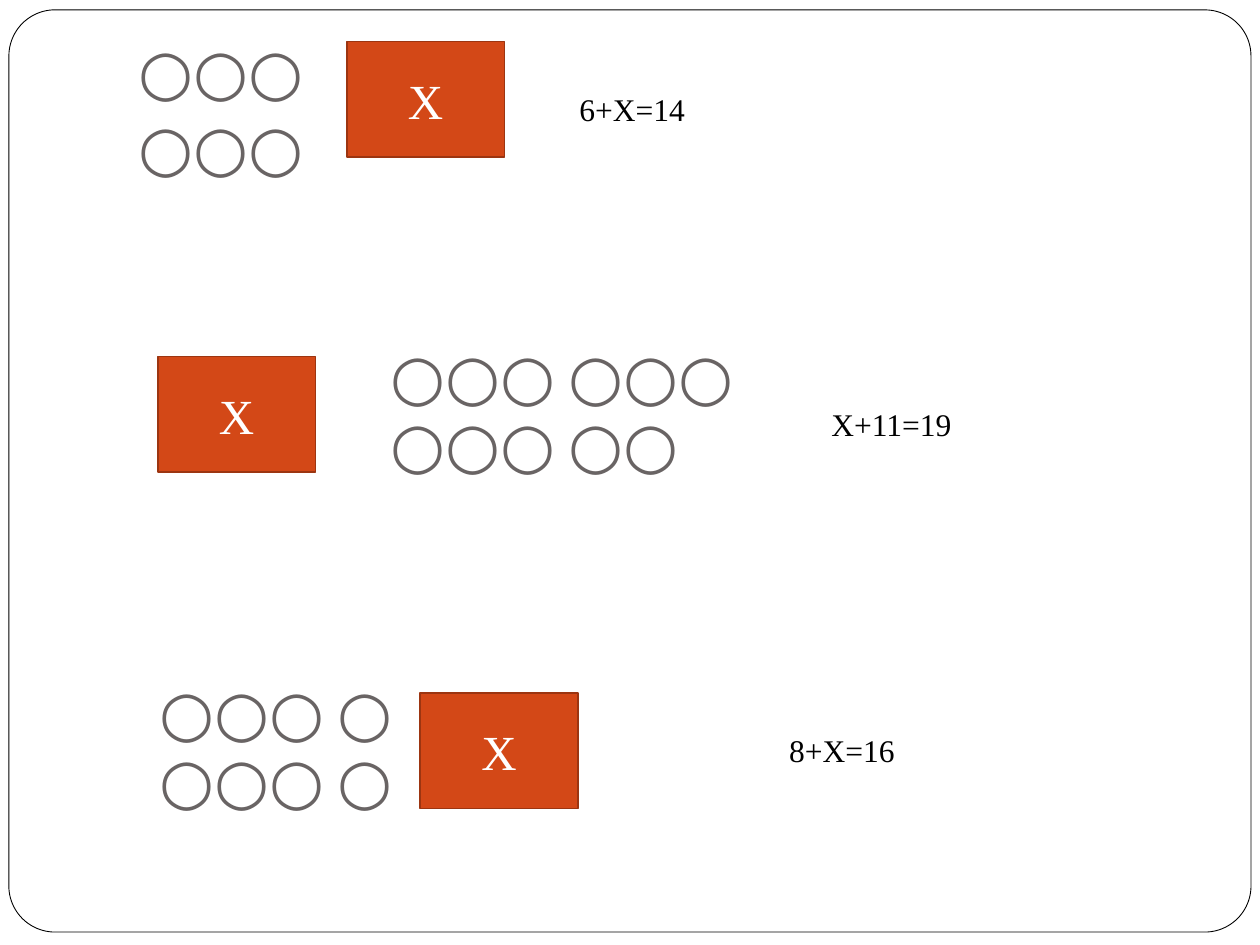
from dataclasses import dataclass
from typing import NamedTuple

from pptx import Presentation
from pptx.dml.color import RGBColor
from pptx.enum.shapes import MSO_SHAPE
from pptx.enum.text import MSO_ANCHOR, MSO_AUTO_SIZE, PP_ALIGN
from pptx.util import Cm, Pt


@dataclass(frozen=True)
class Theme:
    """Colours, fonts and type sizes of the slide."""
    paper: RGBColor = RGBColor.from_string("FFFFFF")
    ink: RGBColor = RGBColor.from_string("000000")
    counter: RGBColor = RGBColor.from_string("696464")
    card: RGBColor = RGBColor.from_string("D34817")
    card_edge: RGBColor = RGBColor.from_string("9C3511")
    text_font: str = "Times New Roman"
    counter_font: str = "Cabin"
    equation_size: int = 18
    card_size: int = 28
    counter_size: int = 36


class Box(NamedTuple):
    """Left, top, width and height in centimetres."""
    left: float
    top: float
    width: float
    height: float

    def inner(self, left, top, width, height):
        """Return a box placed relative to this one."""
        return Box(self.left + left, self.top + top, width, height)

    def lengths(self):
        """Return the four values as slide lengths."""
        return [Cm(value) for value in self]


THEME = Theme()
PAGE = Box(0, 0, 25.4, 19.05)
COUNTER_WIDTH, ROW_HEIGHT = 21.59, 3.18
CARD_WIDTH, CARD_HEIGHT = 3.18, 2.33
EQUATION_HEIGHT = 1.02

ROWS = [
    {"top": 0.76, "counters": [(2.54, "○○○\v○○○")], "spacing": 1.0,
     "card": (6.99, 0.08), "equation": (11.43, 0.93, 2.67, "6+X=14")},
    {"top": 6.77, "counters": [(7.62, "○○○\v○○○"), (11.22, "○○○\v○○")], "spacing": 0.9,
     "card": (3.18, 0.42), "equation": (16.51, 1.27, 2.95, "X+11=19")},
    {"top": 13.55, "counters": [(2.96, "○○○\v○○○"), (6.56, "○\v○")], "spacing": 0.9,
     "card": (8.47, 0.42), "equation": (15.66, 1.06, 2.67, "8+X=16")},
]


def apply(target, values):
    """Set every attribute named in the dict."""
    for name, value in values.items():
        setattr(target, name, value)


def write(shape, text, font, size, colour, frame_format, para_format):
    """Fill a shape with one formatted paragraph."""
    frame = shape.text_frame
    apply(frame, frame_format)
    para = frame.paragraphs[0]
    para.text = text
    apply(para, para_format)
    for span in para.runs:
        apply(span.font, {"name": font, "size": Pt(size)})
        span.font.color.rgb = colour


def add_panel(page, kind, box, fill, edge, weight):
    """Draw a filled preset shape with an outline."""
    panel = page.shapes.add_shape(kind, *box.lengths())
    panel.shadow.inherit = False
    panel.fill.solid()
    panel.fill.fore_color.rgb = fill
    panel.line.color.rgb = edge
    panel.line.width = Pt(weight)
    return panel


def add_frame(page, box):
    """Draw the rounded border around the page."""
    frame = add_panel(page, MSO_SHAPE.ROUNDED_RECTANGLE,
                      box.inner(0.18, 0.2, 25.04, 18.59), THEME.paper, THEME.ink, 0.5)
    frame.adjustments[0] = 0.05


def add_counters(page, box, text, spacing):
    """Place a block of counting circles."""
    write(page.shapes.add_textbox(*box.lengths()), text,
          THEME.counter_font, THEME.counter_size, THEME.counter,
          {"word_wrap": True, "vertical_anchor": MSO_ANCHOR.BOTTOM,
           "margin_bottom": Cm(0.25)},
          {"line_spacing": spacing})


def add_card(page, box):
    """Place the card that stands for the unknown."""
    card = add_panel(page, MSO_SHAPE.RECTANGLE, box, THEME.card, THEME.card_edge, 1)
    write(card, "X", THEME.text_font, THEME.card_size, THEME.paper,
          {"vertical_anchor": MSO_ANCHOR.MIDDLE}, {"alignment": PP_ALIGN.CENTER})


def add_equation(page, box, text):
    """Place the equation that belongs to a row."""
    write(page.shapes.add_textbox(*box.lengths()), text,
          THEME.text_font, THEME.equation_size, THEME.ink,
          {"word_wrap": False, "auto_size": MSO_AUTO_SIZE.SHAPE_TO_FIT_TEXT}, {})


def add_row(page, box, row):
    """Place the counters, card and equation of one row."""
    for left, text in row["counters"]:
        add_counters(page, box.inner(left, 0, COUNTER_WIDTH, box.height),
                     text, row["spacing"])
    add_card(page, box.inner(*row["card"], CARD_WIDTH, CARD_HEIGHT))
    left, top, width, text = row["equation"]
    add_equation(page, box.inner(left, top, width, EQUATION_HEIGHT), text)


def main():
    """Build and save the deck."""
    deck = Presentation()
    apply(deck, {"slide_width": Cm(PAGE.width), "slide_height": Cm(PAGE.height)})
    page = deck.slides.add_slide(deck.slide_layouts[6])
    add_frame(page, PAGE)
    for row in ROWS:
        add_row(page, PAGE.inner(0, row["top"], PAGE.width, ROW_HEIGHT), row)
    deck.save("out.pptx")


if __name__ == "__main__":
    main()
